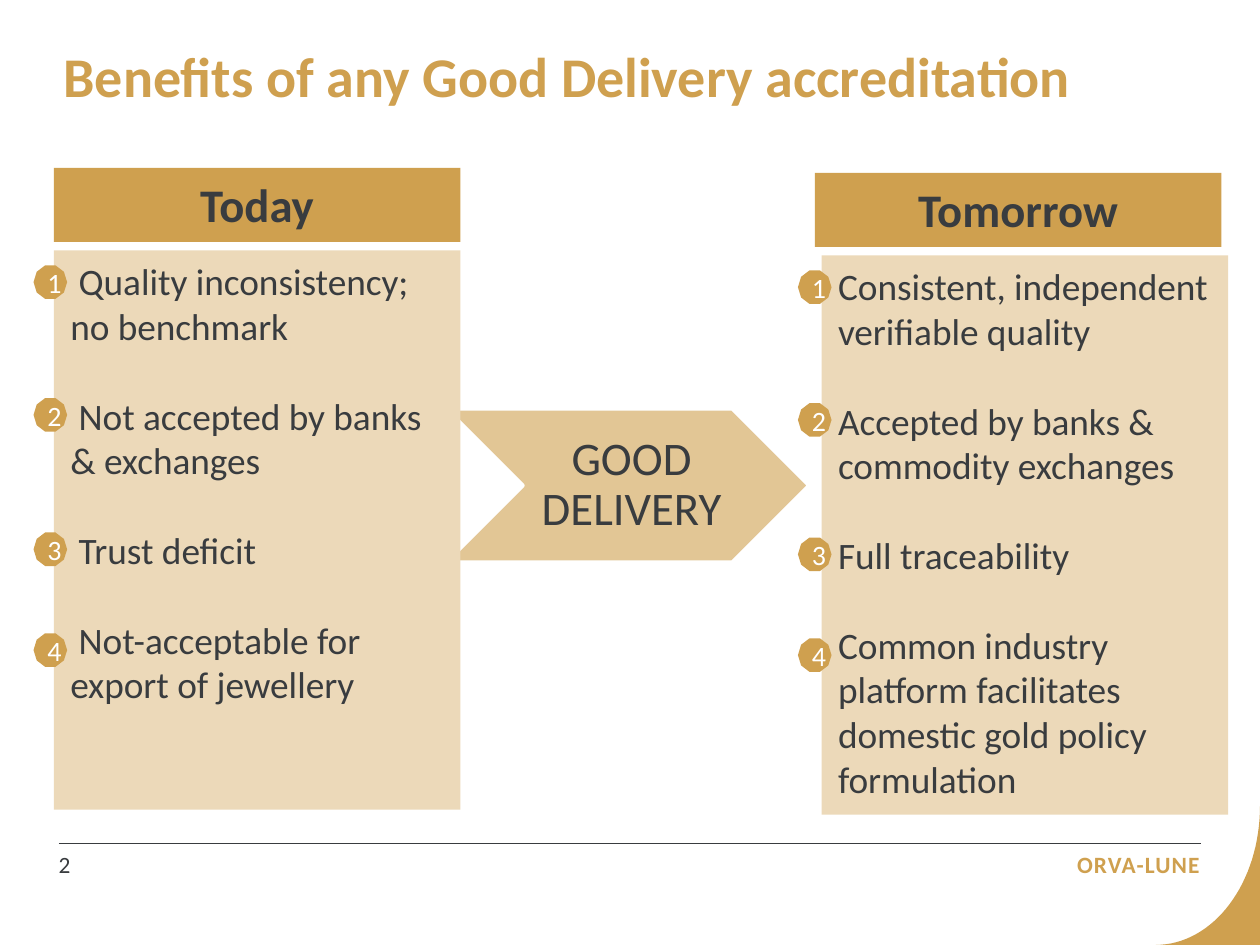
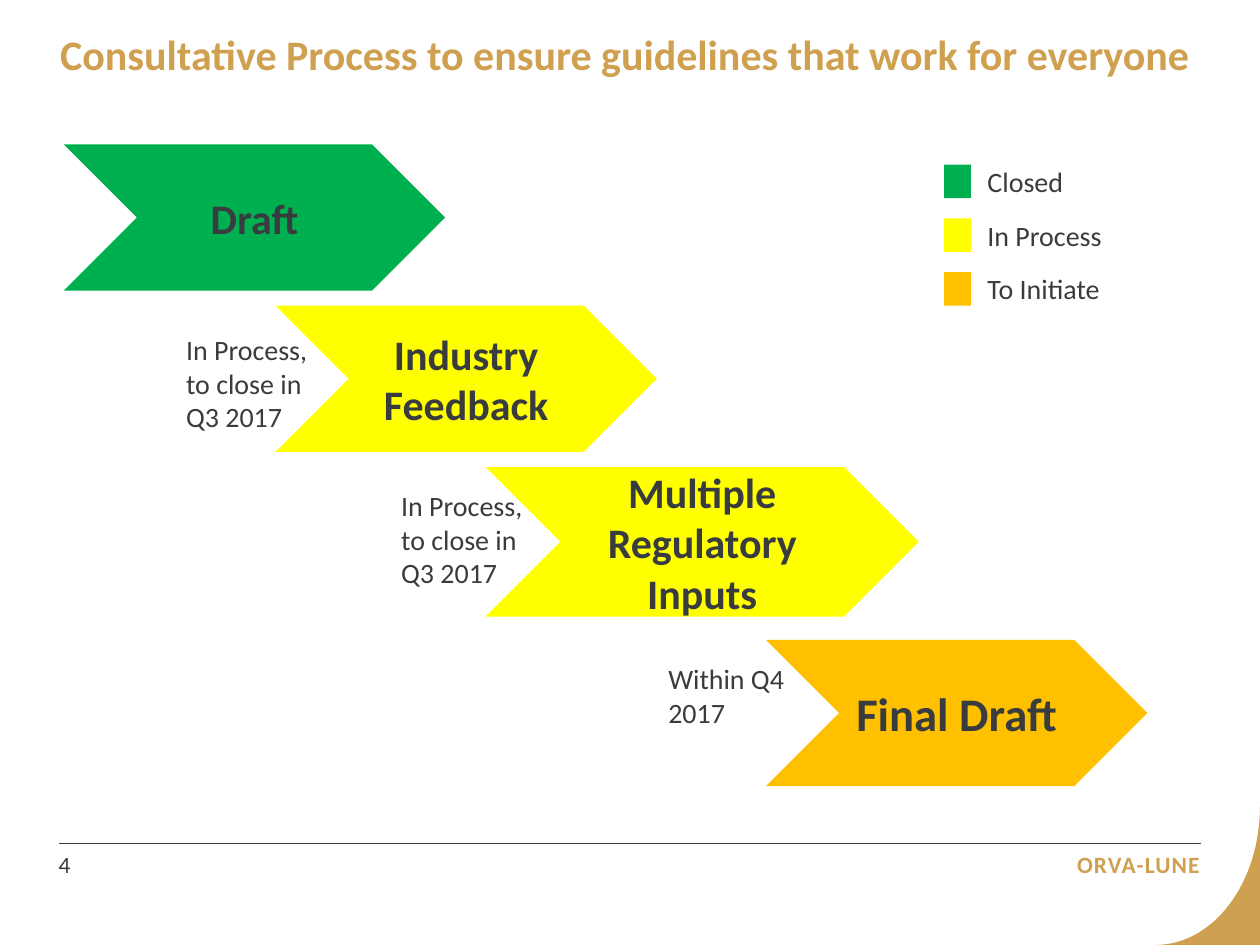
from math import cos, pi, sin

from lxml.etree import SubElement
from pptx import Presentation
from pptx.dml.color import RGBColor
from pptx.enum.shapes import MSO_CONNECTOR, MSO_SHAPE
from pptx.enum.text import MSO_ANCHOR, PP_ALIGN
from pptx.oxml.ns import qn
from pptx.util import Inches, Pt

FONT = "Calibri"
GOLD = RGBColor(0xCF, 0xA0, 0x4F)
LIGHT_GOLD = RGBColor(0xE2, 0xC6, 0x95)
PALE_GOLD = RGBColor(0xEC, 0xD9, 0xB9)
INK = RGBColor(0x39, 0x3C, 0x3F)
WHITE = RGBColor(0xFF, 0xFF, 0xFF)
GREEN = RGBColor(0x00, 0xB0, 0x50)
YELLOW = RGBColor(0xFF, 0xFF, 0x00)
AMBER = RGBColor(0xFF, 0xC0, 0x00)

SLIDE_WIDTH = 7.5
SLIDE_HEIGHT = SLIDE_WIDTH * 3 / 4
COLUMN_WIDTH = 2.42
BADGE_SIZE = 0.2
BADGE_OFFSETS = (0.09, 0.88, 1.68, 2.28)
LEGEND = (("Closed", GREEN), ("In Process", YELLOW), ("To Initiate", AMBER))


def write(shape, lines, size, color=INK, bold=False, align=PP_ALIGN.LEFT,
          anchor=MSO_ANCHOR.TOP):
    text_frame = shape.text_frame
    text_frame.word_wrap = True
    text_frame.vertical_anchor = anchor
    text_frame.text = "\n".join(lines)
    for paragraph in text_frame.paragraphs:
        paragraph.alignment = align
        for run in paragraph.runs:
            run.font.name = FONT
            run.font.size = Pt(size)
            run.font.bold = bold
            run.font.color.rgb = color
    return text_frame


def set_margins(text_frame, left, others):
    text_frame.margin_left = Inches(left)
    text_frame.margin_top = Inches(others)
    text_frame.margin_right = Inches(others)
    text_frame.margin_bottom = Inches(others)


def add_text(slide, left, top, width, height, text, size, **style):
    box = slide.shapes.add_textbox(
        Inches(left), Inches(top), Inches(width), Inches(height))
    return write(box, [text], size, **style)


def fill_plain(shape, color):
    shape.shadow.inherit = False
    shape.fill.solid()
    shape.fill.fore_color.rgb = color
    shape.line.fill.background()


def add_block(slide, kind, left, top, width, height, color):
    shape = slide.shapes.add_shape(
        kind, Inches(left), Inches(top), Inches(width), Inches(height))
    fill_plain(shape, color)
    return shape


def add_corner(slide, left=6.88, top=4.8, steps=32):
    """Fill the bottom right corner outside a quarter ellipse."""
    angles = [pi / 2 * step / steps for step in range(steps + 1)]
    arc = [(left + (SLIDE_WIDTH - left) * sin(angle),
            top + (SLIDE_HEIGHT - top) * cos(angle)) for angle in angles]
    builder = slide.shapes.build_freeform(
        Inches(SLIDE_WIDTH), Inches(SLIDE_HEIGHT))
    builder.add_line_segments([(Inches(x), Inches(y)) for x, y in arc])
    fill_plain(builder.convert_to_shape(), GOLD)


def add_footer(slide, number):
    rule = slide.shapes.add_connector(
        MSO_CONNECTOR.STRAIGHT, Inches(0.35), Inches(5.02),
        Inches(7.15), Inches(5.02))
    rule.line.color.rgb = INK
    rule.line.width = Pt(0.5)
    SubElement(rule.element.spPr, qn("a:effectLst"))

    name = add_text(slide, 5.55, 5.06, 1.59, 0.2, "ORVA-LUNE", 10,
                    color=GOLD, bold=True, align=PP_ALIGN.RIGHT)
    name.paragraphs[0].runs[0].font._element.set("spc", "50")
    page = add_text(slide, 0.35, 5.06, 0.47, 0.2, str(number), 10)
    for text_frame in (name, page):
        set_margins(text_frame, 0, 0)


def start_slide(presentation, number):
    slide = presentation.slides.add_slide(presentation.slide_layouts[6])
    add_corner(slide)
    add_footer(slide, number)
    return slide


def add_title(slide, left, top, width, height, text, size):
    add_text(slide, left, top, width, height, text, size,
             color=GOLD, bold=True)


def add_column(slide, header_left, header_top, panel_left, badge_left,
               heading, points, first_indent=0):
    """Add a heading bar over a panel of numbered points."""
    header = add_block(slide, MSO_SHAPE.RECTANGLE, header_left, header_top,
                       COLUMN_WIDTH, 0.44, GOLD)
    write(header, [heading], 20, bold=True, align=PP_ALIGN.CENTER)

    panel_top = header_top + 0.49
    panel = add_block(slide, MSO_SHAPE.RECTANGLE, panel_left, panel_top,
                      COLUMN_WIDTH, 3.33, PALE_GOLD)
    for paragraph in write(panel, points, 16).paragraphs:
        paragraph.space_after = Pt(19.2)
        paragraph._p.get_or_add_pPr().set("indent", str(Inches(first_indent)))

    for number, offset in enumerate(BADGE_OFFSETS, start=1):
        badge = add_block(slide, MSO_SHAPE.DECAGON, badge_left,
                          panel_top + offset, BADGE_SIZE, BADGE_SIZE, GOLD)
        write(badge, [str(number)], 12, color=WHITE,
              align=PP_ALIGN.CENTER, anchor=MSO_ANCHOR.MIDDLE)


def add_delivery_arrow(slide):
    arrow = add_block(slide, MSO_SHAPE.CHEVRON, 2.65, 2.43, 2.17, 0.92,
                      LIGHT_GOLD)
    arrow.line.color.rgb = WHITE
    arrow.line.width = Pt(2)
    label = add_text(slide, 3.11, 2.43, 1.24, 0.92, "GOOD DELIVERY", 20,
                     align=PP_ALIGN.CENTER, anchor=MSO_ANCHOR.MIDDLE)
    set_margins(label, 0.09, 0.03)
    label.paragraphs[0].line_spacing = 0.9


def add_step(slide, left, top, text, color, width=2.27, height=0.87, size=18):
    step = add_block(slide, MSO_SHAPE.CHEVRON, left, top, width, height, color)
    write(step, [text], size, bold=True, align=PP_ALIGN.CENTER,
          anchor=MSO_ANCHOR.MIDDLE)


def add_legend(slide, left=5.62, top=0.98, pitch=0.32):
    for index, (label, color) in enumerate(LEGEND):
        row_top = top + index * pitch
        add_block(slide, MSO_SHAPE.RECTANGLE, left, row_top, 0.16, 0.2, color)
        add_text(slide, left + 0.16, row_top - 0.05, 1.67, 0.3, label, 12)


def build_benefits(presentation):
    slide = start_slide(presentation, 2)
    add_title(slide, 0.28, 0.2, 6.57, 0.5,
              "Benefits of any Good Delivery accreditation", 24)
    add_delivery_arrow(slide)
    add_column(slide, 0.32, 1, 0.32, 0.2, "Today", [
        "Quality inconsistency; no benchmark",
        "Not accepted by banks & exchanges",
        "Trust deficit",
        "Not-acceptable for export of jewellery",
    ], first_indent=0.05)
    add_column(slide, 4.85, 1.03, 4.89, 4.75, "Tomorrow", [
        "Consistent, independent verifiable quality",
        "Accepted by banks & commodity exchanges",
        "Full traceability",
        "Common industry platform facilitates domestic gold policy formulation",
    ])


def build_process(presentation):
    slide = start_slide(presentation, 4)
    add_title(slide, 0.26, 0.12, 7.08, 0.4,
              "Consultative Process to ensure guidelines that work for everyone",
              18)
    add_step(slide, 0.38, 0.86, "Draft", GREEN)
    add_step(slide, 1.64, 1.82, "Industry Feedback", YELLOW)
    add_step(slide, 2.89, 2.78, "Multiple Regulatory Inputs", YELLOW,
             width=2.58, height=0.89)
    add_step(slide, 4.56, 3.81, "Final Draft", AMBER, size=20)
    add_legend(slide)
    for left, top, height, note in (
            (1.01, 1.93, 0.71, "In Process, to close in Q3 2017"),
            (2.29, 2.86, 0.71, "In Process, to close in Q3 2017"),
            (3.88, 3.89, 0.5, "Within Q4 2017")):
        add_text(slide, left, top, 1, height, note, 12)


def main():
    presentation = Presentation()
    presentation.slide_width = Inches(SLIDE_WIDTH)
    presentation.slide_height = Inches(SLIDE_HEIGHT)
    build_benefits(presentation)
    build_process(presentation)
    presentation.save("out.pptx")


if __name__ == "__main__":
    main()
